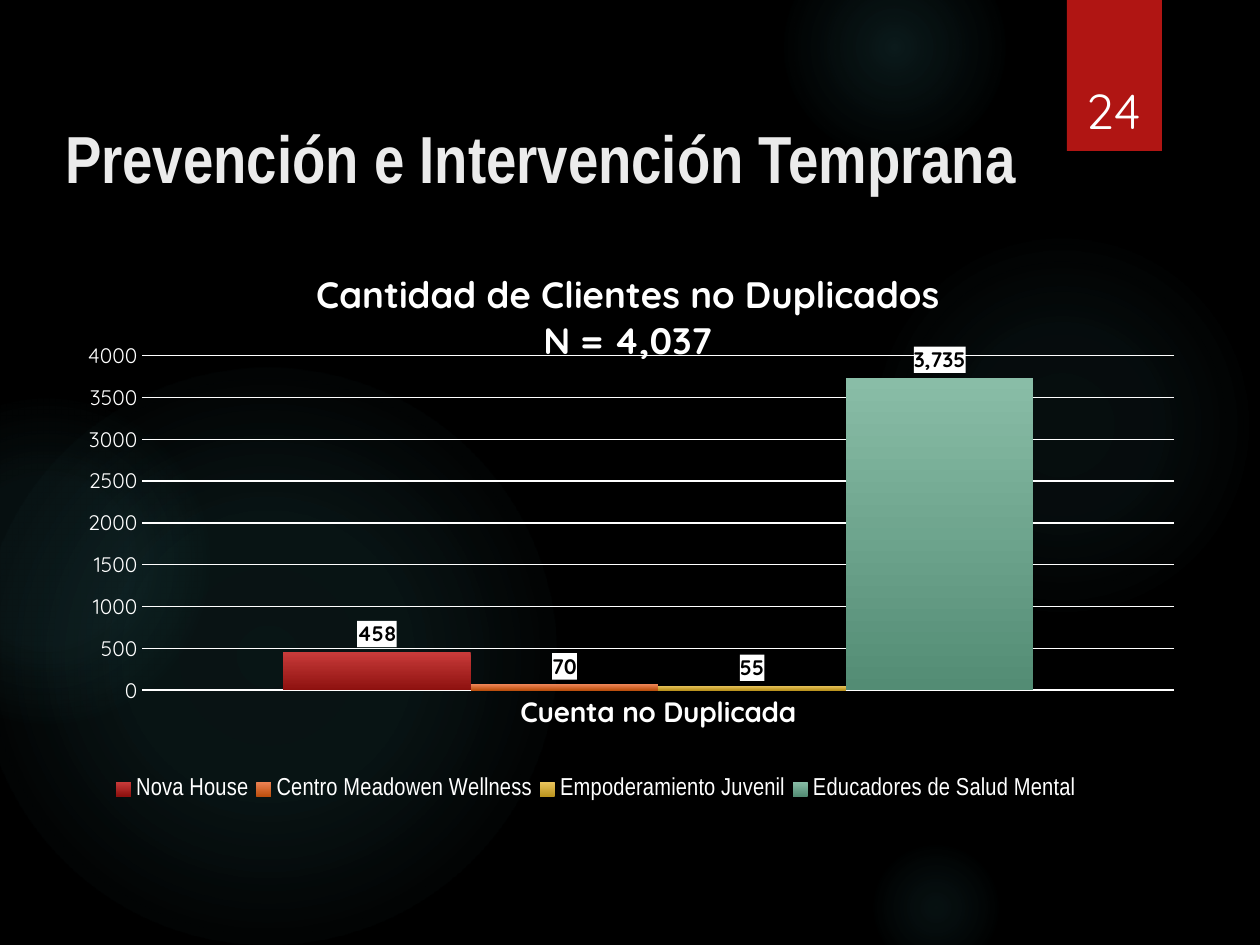
from dataclasses import dataclass

from lxml import etree
from pptx import Presentation
from pptx import util as u
from pptx.chart.data import CategoryChartData
from pptx.dml.color import RGBColor
from pptx.enum import chart as charts, shapes, text
from pptx.oxml import parse_xml
from pptx.oxml.ns import nsdecls, qn

EMU_PER_PX = 914400 / 126


@dataclass(frozen=True)
class Theme:
    background: str = "000000"
    foreground: str = "FFFFFF"
    heading: str = "EBEBEB"
    label: str = "000000"
    accent: str = "B01513"
    glow: str = "50B9C1"
    heading_font: str = "Arial Narrow"
    body_font: str = "Quicksand"
    heading_size: int = 38
    number_size: int = 28
    chart_title_size: int = 21
    category_size: int = 16
    legend_size: int = 14
    small_size: int = 12


def px(length):
    return u.Emu(round(length * EMU_PER_PX))


def box(bounds):
    return [px(length) for length in bounds]


def color(value):
    return RGBColor.from_string(value)


def set_gradient(fill, properties, stops, direction):
    fill.background()
    stop_xml = "".join(
        f'<a:gs pos="{position * 1000}"><a:srgbClr val="{value}">'
        f'<a:alpha val="{alpha * 1000}"/></a:srgbClr></a:gs>'
        for position, value, alpha in stops
    )
    gradient = parse_xml(
        f'<a:gradFill {nsdecls("a")} rotWithShape="1">'
        f"<a:gsLst>{stop_xml}</a:gsLst>{direction}</a:gradFill>"
    )
    properties.replace(properties.find(qn("a:noFill")), gradient)


def set_layout(parent, index, target="", **fractions):
    for layout in parent.findall(qn("c:layout")):
        parent.remove(layout)
    modes = "".join(f'<c:{axis}Mode val="edge"/>' for axis in "xy")
    values = "".join(f'<c:{name} val="{value}"/>' for name, value in fractions.items())
    parent.insert(index, parse_xml(
        f'<c:layout {nsdecls("c")}><c:manualLayout>{target}{modes}{values}'
        "</c:manualLayout></c:layout>"
    ))


class SlideBuilder:
    LINEAR = '<a:lin ang="5400000" scaled="0"/>'
    RADIAL = ('<a:path path="circle"><a:fillToRect l="50000" t="50000" '
              'r="50000" b="50000"/></a:path>')

    def __init__(self, presentation, theme):
        self.theme = theme
        self.slide = presentation.slides.add_slide(presentation.slide_layouts[5])
        background = self.slide.background.fill
        background.solid()
        background.fore_color.rgb = color(theme.background)

    def style(self, font, size, name=None, value=None, bold=False):
        font.size = u.Pt(size)
        font.name = name or self.theme.body_font
        font.color.rgb = color(value or self.theme.foreground)
        font.bold = bold

    def shape(self, kind, bounds):
        shape = self.slide.shapes.add_shape(kind, *box(bounds))
        shape.shadow.inherit = False
        shape.line.fill.background()
        return shape

    def glow(self, left, top, diameter, stops):
        circle = self.shape(shapes.MSO_SHAPE.OVAL, (left, top, diameter, diameter))
        colored = [(position, self.theme.glow, alpha) for position, alpha in stops]
        set_gradient(circle.fill, circle._element.spPr, colored, self.RADIAL)

    def ribbon(self, bounds):
        ribbon = self.shape(shapes.MSO_SHAPE.RECTANGLE, bounds)
        ribbon.fill.solid()
        ribbon.fill.fore_color.rgb = color(self.theme.accent)
        effects = ribbon._element.spPr.find(qn("a:effectLst"))
        shadow = etree.SubElement(effects, qn("a:outerShdw"), blurRad=str(u.Pt(3)),
                                  dist=str(u.Pt(2)), dir="5400000")
        shade = etree.SubElement(shadow, qn("a:srgbClr"), val=self.theme.background)
        etree.SubElement(shade, qn("a:alpha"), val="45000")

    def title(self, words, bounds):
        title = self.slide.shapes.title
        title.left, title.top, title.width, title.height = box(bounds)
        frame = title.text_frame
        frame.text = words
        frame.auto_size = text.MSO_AUTO_SIZE.NONE
        frame.vertical_anchor = text.MSO_ANCHOR.TOP
        frame.margin_top = px(12)
        paragraph = frame.paragraphs[0]
        paragraph.alignment = text.PP_ALIGN.CENTER
        self.style(paragraph.font, self.theme.heading_size, self.theme.heading_font,
                   self.theme.heading, True)

    def page_number(self, words, bounds):
        frame = self.slide.shapes.add_textbox(*box(bounds)).text_frame
        frame.word_wrap = True
        frame.vertical_anchor = text.MSO_ANCHOR.BOTTOM
        frame.text = words
        paragraph = frame.paragraphs[0]
        paragraph.alignment = text.PP_ALIGN.CENTER
        self.style(paragraph.font, self.theme.number_size)

    def column_chart(self, title, category, series_rows, bounds):
        data = CategoryChartData(number_format="General")
        data.categories = [category]
        for name, value, *_ in series_rows:
            data.add_series(name, [value])
        chart = self.slide.shapes.add_chart(
            charts.XL_CHART_TYPE.COLUMN_CLUSTERED, *box(bounds), data).chart
        self.style(chart.font, 10)
        plot = chart.plots[0]
        plot.gap_width, plot.overlap = 150, 0
        plot.vary_by_categories = False
        set_layout(chart._chartSpace.chart.plotArea, 0,
                   '<c:layoutTarget val="inner"/>', x=0.07, y=0.19, w=0.91, h=0.56)
        for series, (_, _, top, bottom) in zip(plot.series, series_rows):
            self.column(series, top, bottom)
        self.chart_title(chart, title)
        self.axes(chart)
        self.legend(chart)

    def column(self, series, top, bottom):
        fill = series.format.fill
        set_gradient(fill, series._element.find(qn("c:spPr")),
                     [(0, top, 100), (100, bottom, 100)], self.LINEAR)
        labels = series.data_labels
        labels.show_value = True
        labels.number_format = "#,##0"
        labels.number_format_is_linked = False
        labels.position = charts.XL_LABEL_POSITION.OUTSIDE_END
        self.style(labels.font, self.theme.small_size, value=self.theme.label, bold=True)
        labels._element.find(qn("c:txPr")).addprevious(parse_xml(
            f'<c:spPr {nsdecls("c", "a")}><a:solidFill>'
            f'<a:srgbClr val="{self.theme.foreground}"/></a:solidFill></c:spPr>'))

    def chart_title(self, chart, words):
        chart.has_title = True
        title = chart.chart_title
        title.include_in_layout = False
        title.text_frame.text = words
        for paragraph in title.text_frame.paragraphs:
            self.style(paragraph.font, self.theme.chart_title_size, bold=True)
        set_layout(title._element, 1, x=0.22, y=0.04)

    def axes(self, chart):
        values, categories = chart.value_axis, chart.category_axis
        values.minimum_scale, values.maximum_scale, values.major_unit = 0, 4000, 500
        values.format.line.fill.background()
        for axis in (values, categories):
            axis.major_tick_mark = axis.minor_tick_mark = charts.XL_TICK_MARK.NONE
        for line, width in ((values.major_gridlines.format.line, 0.75),
                            (categories.format.line, 1)):
            line.color.rgb = color(self.theme.foreground)
            line.width = u.Pt(width)
        self.style(values.tick_labels.font, self.theme.small_size)
        self.style(categories.tick_labels.font, self.theme.category_size, bold=True)

    def legend(self, chart):
        chart.has_legend = True
        legend = chart.legend
        legend.position = charts.XL_LEGEND_POSITION.BOTTOM
        legend.include_in_layout = False
        self.style(legend.font, self.theme.legend_size, self.theme.heading_font)
        set_layout(legend._element, 1, x=0.04, y=0.88, w=0.86, h=0.07)


def main():
    presentation = Presentation()
    presentation.slide_width, presentation.slide_height = px(1260), px(945)
    builder = SlideBuilder(presentation, Theme())
    for glow in (
        (868, 231, 388, ((0, 7), (36, 6), (69, 0))),
        (784, -63, 221, ((0, 14), (36, 7), (73, 0))),
        (868, 840, 136, ((0, 9), (36, 5), (66, 0))),
        (-21, 368, 577, ((0, 11), (36, 10), (75, 0))),
        (-116, 399, 325, ((0, 8), (36, 8), (72, 0))),
    ):
        builder.glow(*glow)
    builder.ribbon((1067, 0, 95, 151))
    builder.title("Prevención e Intervención Temprana", (42, 105, 998, 84))
    builder.page_number("24", (1070, 40, 87, 106))
    builder.column_chart(
        "Cantidad de Clientes no Duplicados\nN = 4,037",
        "Cuenta no Duplicada",
        (
            ("Nova House", 458, "C93B3A", "8D110F"),
            ("Centro Meadowen Wellness", 70, "EE8455", "BC4F0E"),
            ("Empoderamiento Juvenil", 55, "EBC65F", "BB941F"),
            ("Educadores de Salud Mental", 3735, "89BDA7", "538C74"),
        ),
        (63, 242, 1134, 598),
    )
    presentation.save("out.pptx")


if __name__ == "__main__":
    main()
